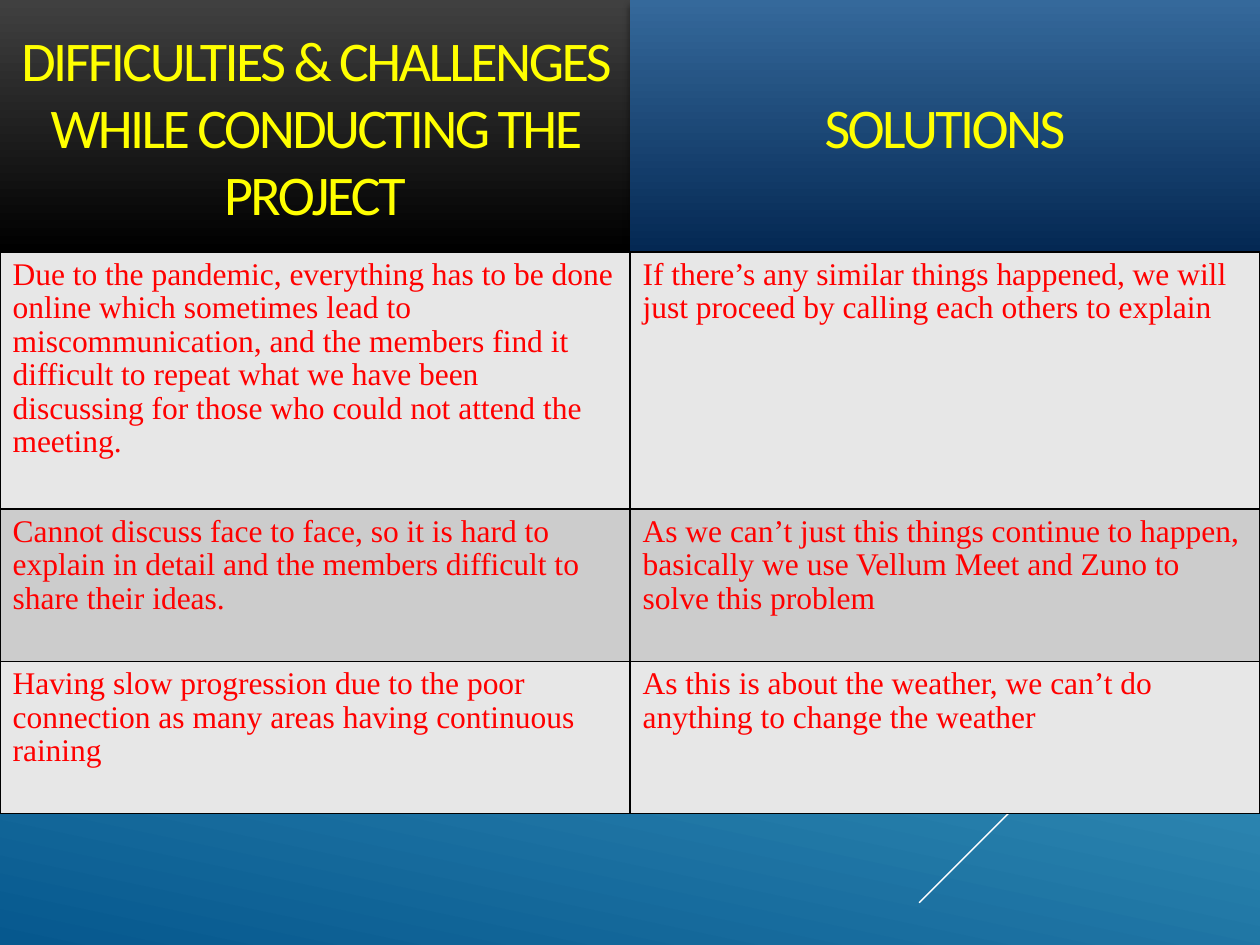
"""Build a slide that pairs project difficulties with their solutions."""
from dataclasses import dataclass

from lxml import etree
from pptx import Presentation
from pptx.dml.color import RGBColor
from pptx.enum.shapes import MSO_CONNECTOR, MSO_SHAPE
from pptx.enum.text import MSO_ANCHOR, MSO_AUTO_SIZE, PP_ALIGN
from pptx.oxml import parse_xml
from pptx.oxml.ns import nsdecls, qn
from pptx.util import Pt

STRAIGHT = MSO_CONNECTOR.STRAIGHT
RECTANGLE = MSO_SHAPE.RECTANGLE
MIDDLE = MSO_ANCHOR.MIDDLE
CENTER = PP_ALIGN.CENTER
NO_AUTOFIT = MSO_AUTO_SIZE.NONE

WIDTH, HEIGHT = 720, 540
COLUMN_WIDTH = WIDTH / 2
HEADER_HEIGHT = 144
ROW_HEIGHTS = (147, 87, 87)
TITLE_ONLY = 5

COLORS = {
    "sky": "6ED2EB", "ocean": "06588E", "line": "FFFFFF", "border": "000000",
    "charcoal": "404040", "black": "000000", "steel": "35699B", "navy": "042853",
    "heading": "FFFF00", "body": "FF0000", "light_row": "E7E7E7", "dark_row": "CCCCCC",
}


@dataclass(frozen=True)
class DiagonalLine:
    start_x: float
    start_y: float
    length: float
    weight: float


@dataclass(frozen=True)
class Header:
    text: str
    left: float
    top_color: str
    bottom_color: str


@dataclass(frozen=True)
class Challenge:
    difficulty: str
    solution: str


LINES = (
    DiagonalLine(720, 306.7, 59.8, 0.75),
    DiagonalLine(720, 321.1, 194.8, 0.75),
    DiagonalLine(720, 327.6, 123.8, 0.75),
    DiagonalLine(719.3, 318.2, 113, 2.25),
    DiagonalLine(719.3, 354.2, 82.1, 2.25),
)
DIFFICULTIES = Header("DIFFICULTIES & CHALLENGES WHILE CONDUCTING THE PROJECT", 0, "charcoal", "black")
SOLUTIONS = Header("SOLUTIONS", COLUMN_WIDTH, "steel", "navy")
CHALLENGES = (
    Challenge(
        "Due to the pandemic, everything has to be done online which sometimes lead to "
        "miscommunication, and the members find it difficult to repeat what we have been "
        "discussing for those who could not attend the meeting.",
        "If there’s any similar things happened, we will just proceed by calling each others to explain",
    ),
    Challenge(
        "Cannot discuss face to face, so it is hard to explain in detail and the members "
        "difficult to share their ideas.",
        "As we can’t just this things continue to happen, basically we use Vellum Meet and Zuno "
        "to solve this problem",
    ),
    Challenge(
        "Having slow progression due to the poor connection as many areas having continuous raining",
        "As this is about the weather, we can’t do anything to change the weather",
    ),
)


def color(name: str) -> RGBColor:
    return RGBColor.from_string(COLORS[name])


def fill_gradient(fill, names: tuple[str, str], start: float, angle: float) -> None:
    fill.gradient()
    fill.gradient_angle = angle
    for stop, name, position in zip(fill.gradient_stops, names, (start, 1)):
        stop.color.rgb = color(name)
        stop.position = position


def draw_line(slide, line: DiagonalLine) -> None:
    connector = slide.shapes.add_connector(
        STRAIGHT, Pt(line.start_x), Pt(line.start_y),
        Pt(line.start_x - line.length), Pt(line.start_y + line.length))
    connector.line.color.rgb = color("line")
    connector.line.width = Pt(line.weight)
    etree.SubElement(connector._element.spPr, qn("a:effectLst"))


def format_header(shape, header: Header) -> None:
    shape.left, shape.top = Pt(header.left), Pt(0)
    shape.width, shape.height = Pt(COLUMN_WIDTH), Pt(HEADER_HEIGHT)
    fill_gradient(shape.fill, (header.top_color, header.bottom_color), 0, 270)
    shape.line.fill.background()
    frame = shape.text_frame
    frame.text = header.text
    frame.word_wrap = True
    frame.auto_size = NO_AUTOFIT
    frame.vertical_anchor = MIDDLE
    paragraph = frame.paragraphs[0]
    paragraph.alignment = CENTER
    paragraph.font.name = "Calibri"
    paragraph.font.size = Pt(32)
    paragraph.font.color.rgb = color("heading")
    paragraph.runs[0]._r.get_or_add_rPr().set("spc", "-150")


def add_shadow(shape) -> None:
    shape.shadow.inherit = False
    shape._element.spPr.find(qn("a:effectLst")).append(parse_xml(
        f'<a:outerShdw {nsdecls("a")} blurRad="{Pt(4)}" dist="{Pt(3)}" dir="5400000" rotWithShape="0">'
        f'<a:srgbClr val="{COLORS["black"]}"><a:alpha val="46000"/></a:srgbClr></a:outerShdw>'))


def format_cell(cell, text: str, fill_name: str) -> None:
    properties = cell._tc.get_or_add_tcPr()
    for side in "LRTB":
        properties.append(parse_xml(
            f'<a:ln{side} {nsdecls("a")} w="{Pt(1)}"><a:solidFill>'
            f'<a:srgbClr val="{COLORS["border"]}"/></a:solidFill></a:ln{side}>'))
    cell.fill.solid()
    cell.fill.fore_color.rgb = color(fill_name)
    cell.text = text
    paragraph = cell.text_frame.paragraphs[0]
    paragraph.line_spacing = 0.96
    paragraph.font.name = "Times New Roman"
    paragraph.font.size = Pt(18)
    paragraph.font.bold = False
    paragraph.font.color.rgb = color("body")


def draw_table(slide) -> None:
    table = slide.shapes.add_table(
        len(CHALLENGES), 2, Pt(0), Pt(HEADER_HEIGHT), Pt(WIDTH), Pt(sum(ROW_HEIGHTS))).table
    table.first_row = False
    for index, (challenge, height) in enumerate(zip(CHALLENGES, ROW_HEIGHTS)):
        table.rows[index].height = Pt(height)
        fill_name = "dark_row" if index % 2 else "light_row"
        format_cell(table.cell(index, 0), challenge.difficulty, fill_name)
        format_cell(table.cell(index, 1), challenge.solution, fill_name)


def main() -> None:
    presentation = Presentation()
    presentation.slide_width, presentation.slide_height = Pt(WIDTH), Pt(HEIGHT)
    slide = presentation.slides.add_slide(presentation.slide_layouts[TITLE_ONLY])
    fill_gradient(slide.background.fill, ("sky", "ocean"), 0.1, 258)
    for line in LINES:
        draw_line(slide, line)
    format_header(slide.shapes.title, DIFFICULTIES)
    solutions_shape = slide.shapes.add_shape(RECTANGLE, Pt(0), Pt(0), Pt(1), Pt(1))
    format_header(solutions_shape, SOLUTIONS)
    add_shadow(solutions_shape)
    draw_table(slide)
    presentation.save("out.pptx")


if __name__ == "__main__":
    main()
